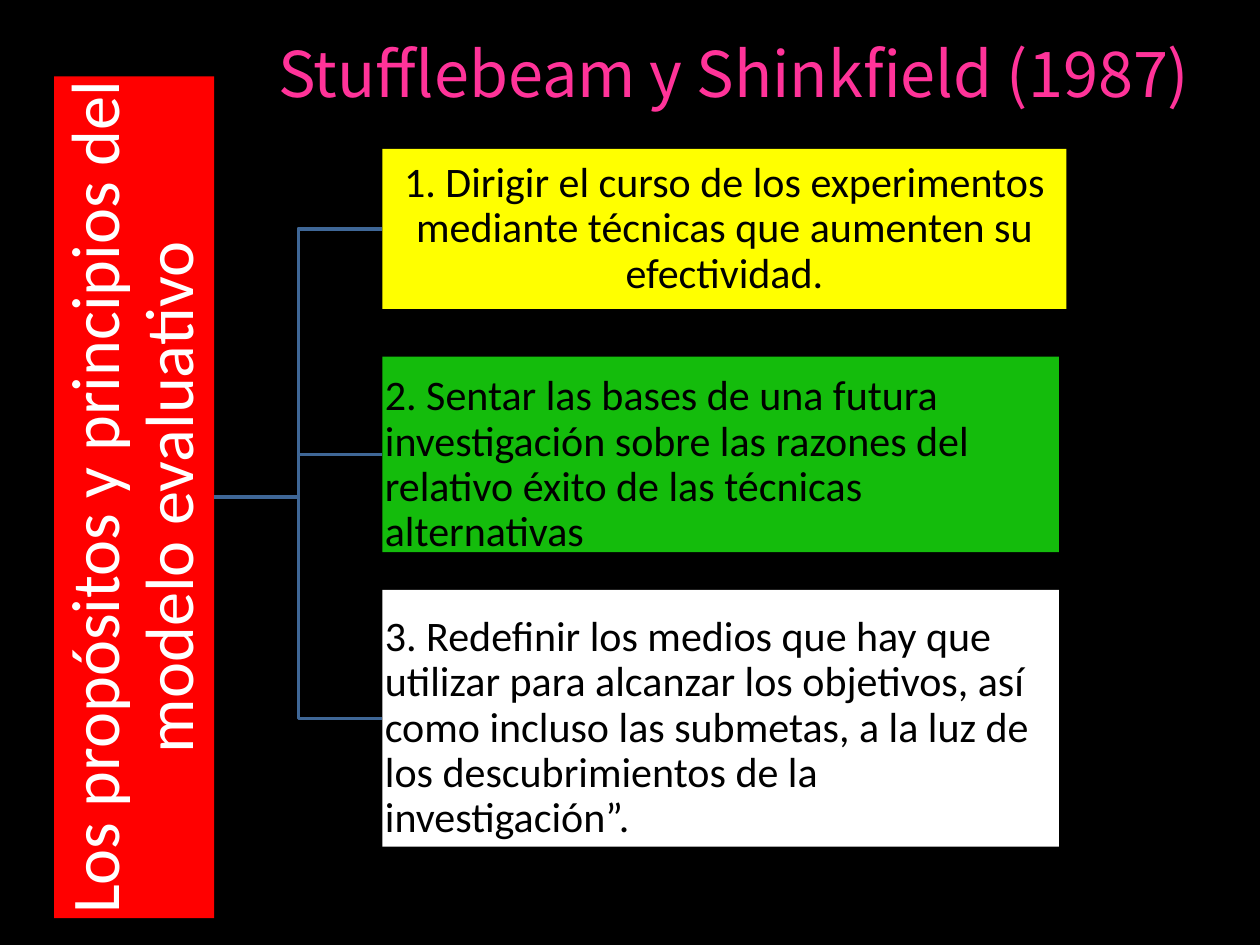
from pptx import Presentation
from pptx.dml.color import RGBColor
from pptx.enum.shapes import MSO_CONNECTOR, MSO_SHAPE
from pptx.enum.text import MSO_ANCHOR, PP_ALIGN
from pptx.oxml.ns import qn
from pptx.util import Cm, Pt
from lxml import etree

RECTANGLE = MSO_SHAPE.RECTANGLE
ELBOW = MSO_CONNECTOR.ELBOW
TOP, MIDDLE = MSO_ANCHOR.TOP, MSO_ANCHOR.MIDDLE
LEFT, CENTER = PP_ALIGN.LEFT, PP_ALIGN.CENTER
LEFT_SIDE = 1

BLACK = RGBColor(0x00, 0x00, 0x00)
WHITE = RGBColor(0xFF, 0xFF, 0xFF)
RED = RGBColor(0xFF, 0x00, 0x00)
YELLOW = RGBColor(0xFF, 0xFF, 0x00)
GREEN = RGBColor(0x14, 0xBC, 0x0C)
PINK = RGBColor(0xFF, 0x33, 0x99)
BLUE = RGBColor(0x3F, 0x67, 0x97)

BODY_FONT = "Calibri"
TITLE_FONT = "Noto Sans CJK KR"

# Text, fill, alignment, top, width, height and top margin (cm)
PURPOSES = [
    ("1. Dirigir el curso de los experimentos mediante técnicas que "
     "aumenten su efectividad.", YELLOW, CENTER, 0, 13.79, 3.23, 0.25),
    ("2. Sentar las bases de una futura investigación sobre las razones "
     "del relativo éxito de las técnicas alternativas",
     GREEN, LEFT, 4.19, 13.64, 3.94, 0.36),
    ("3. Redefinir los medios que hay que utilizar para alcanzar los "
     "objetivos, así como incluso las submetas, a la luz de los "
     "descubrimientos de la investigación”.",
     WHITE, LEFT, 8.89, 13.64, 5.18, 0.51),
]


def write(frame, text, font, size, color, align):
    para = frame.paragraphs[0]
    para.alignment = align
    span = para.add_run()
    span.text = text
    span.font.name = font
    span.font.size = Pt(size)
    span.font.color.rgb = color
    return para


def add_title(page, left, top, width, height):
    title = page.shapes.title
    title.left, title.top = Cm(left), Cm(top)
    title.width, title.height = Cm(width), Cm(height)
    frame = title.text_frame
    frame.vertical_anchor = MIDDLE
    frame.margin_right = Cm(0.55)
    frame.margin_bottom = Cm(0.38)
    write(frame, "Stufflebeam y Shinkfield (1987)", TITLE_FONT, 36, PINK, CENTER)


def add_block(page, left, top, width, height, text, fill, size, color, align):
    block = page.shapes.add_shape(
        RECTANGLE, Cm(left), Cm(top), Cm(width), Cm(height))
    block.shadow.inherit = False
    block.fill.solid()
    block.fill.fore_color.rgb = fill
    block.line.fill.background()
    frame = block.text_frame
    frame.word_wrap = True
    frame.vertical_anchor = MIDDLE
    frame.margin_left = frame.margin_right = Cm(0.05)
    frame.margin_top = frame.margin_bottom = Cm(0.05)
    write(frame, text, BODY_FONT, size, color, align).line_spacing = 0.9
    return block


def add_root(page, left, top, width, height):
    """Fill an upright box with a bar turned to read upwards."""
    bar = add_block(page, left + (width - height) / 2, top + (height - width) / 2,
                    height, width,
                    "Los propósitos y principios del modelo evaluativo",
                    RED, 39, WHITE, CENTER)
    bar.rotation = 270


def add_purposes(page, left, top):
    blocks = []
    for text, fill, align, offset, width, height, margin in PURPOSES:
        block = add_block(page, left, top + offset, width, height,
                          text, fill, 24, BLACK, align)
        block.text_frame.vertical_anchor = TOP
        block.text_frame.margin_top = Cm(margin)
        blocks.append(block)
    return blocks


def add_branches(page, start_x, start_y, blocks):
    for block in blocks:
        branch = page.shapes.add_connector(
            ELBOW, Cm(start_x), Cm(start_y),
            block.left, block.top + block.height // 2)
        branch.end_connect(block, LEFT_SIDE)
        branch.line.color.rgb = BLUE
        branch.line.width = Pt(2)
        etree.SubElement(branch.element.spPr, qn("a:effectLst"))


def main():
    deck = Presentation()
    deck.slide_width, deck.slide_height = Cm(25.4), Cm(19.05)
    page = deck.slides.add_slide(deck.slide_layouts[5])
    page.background.fill.solid()
    page.background.fill.fore_color.rgb = BLACK

    add_title(page, 3.51, 0, 22.86, 3.18)

    # Diagram: root bar, three purposes and the branches between them
    left, top, width, height = 1.09, 1.54, 3.23, 16.97
    add_root(page, left, top, width, height)
    blocks = add_purposes(page, 7.71, 3)
    add_branches(page, left + width, top + height / 2, blocks)

    deck.save("out.pptx")


if __name__ == "__main__":
    main()
